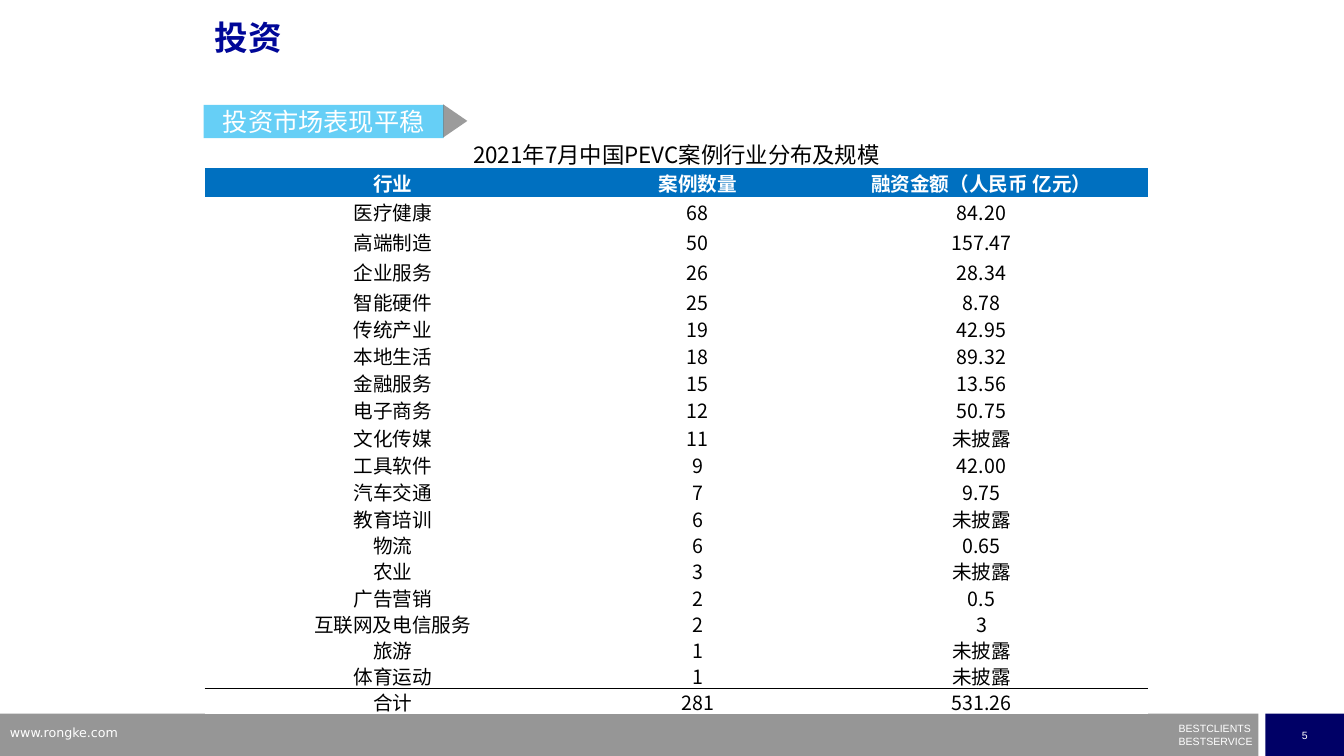
from pptx import Presentation
from pptx.dml.color import RGBColor as RGB
from pptx.enum.shapes import MSO_SHAPE as SHAPE
from pptx.enum.text import MSO_ANCHOR as ANCHOR, MSO_AUTO_SIZE as AUTO, PP_ALIGN as ALIGN
from pptx.oxml import parse_xml
from pptx.oxml.ns import nsdecls, qn
from pptx.util import Pt

PX = 9144
WHITE = RGB(0xFF, 0xFF, 0xFF)
BLACK = RGB(0, 0, 0)
GREY = RGB(0x96, 0x96, 0x96)
SLATE = RGB(0x59, 0x59, 0x59)
NAVY = RGB(0, 0, 0x66)
INK = RGB(0, 0x07, 0x98)
SKY = RGB(0, 0xB0, 0xF0)
BLUE = RGB(0, 0x70, 0xC0)
CJK = "Noto Sans CJK SC"
BARE = "{2D5ABB26-0587-4C30-8999-92F81FD0307C}"

CASES = """医疗健康 68 84.20
高端制造 50 157.47
企业服务 26 28.34
智能硬件 25 8.78
传统产业 19 42.95
本地生活 18 89.32
金融服务 15 13.56
电子商务 12 50.75
文化传媒 11 未披露
工具软件 9 42.00
汽车交通 7 9.75
教育培训 6 未披露
物流 6 0.65
农业 3 未披露
广告营销 2 0.5
互联网及电信服务 2 3
旅游 1 未披露
体育运动 1 未披露
合计 281 531.26"""
HEAD = ["行业", "案例数量", "融资金额（人民币 亿元）"]
COLS = [373, 232, 331]
ROWS = [30, 28] + [30] * 3 + [27] * 8 + [26] * 8


def scale(*box):
    return [n * PX for n in box]


def write(frame, text, size, color, name=CJK, bold=False, align=ALIGN.LEFT):
    frame.text = text
    look = {"size": Pt(size), "name": name, "bold": bold}
    for para in frame.paragraphs:
        para.alignment = align
        for run in para.runs:
            for key, value in look.items():
                setattr(run.font, key, value)
            run.font.color.rgb = color
            run.font._element.append(
                parse_xml(f'<a:ea {nsdecls("a")} typeface="{CJK}"/>'))


def block(shapes, kind, box, color, alpha=100):
    shape = shapes.add_shape(kind, *scale(*box))
    shape.shadow.inherit = False
    shape.fill.solid()
    shape.fill.fore_color.rgb = color
    shape.line.fill.background()
    if alpha < 100:
        tint = shape._element.spPr.find(qn("a:solidFill"))[0]
        tint.append(parse_xml(f'<a:alpha {nsdecls("a")} val="{alpha * 1000}"/>'))
    return shape


def foot(slide, x, y, w, h):
    shapes = slide.shapes
    block(shapes, SHAPE.RECTANGLE, (x, y, w - 85, h), GREY)
    page = block(shapes, SHAPE.RECTANGLE, (x + w - 78, y, 78, h), NAVY)
    page.text_frame.vertical_anchor = ANCHOR.MIDDLE
    write(page.text_frame, "5", 7.5, WHITE, "Arial", align=ALIGN.CENTER)

    motto = shapes.add_textbox(*scale(x + w - 164, y + 14, 76, 20)).text_frame
    for side in ("left", "right", "top", "bottom"):
        setattr(motto, f"margin_{side}", 0)
    motto.word_wrap = True
    write(motto, "BESTCLIENTS\nBESTSERVICE", 7.5, WHITE, "Arial")
    for para in motto.paragraphs:
        para.line_spacing = 0.5
    motto.paragraphs[1].space_before = Pt(4.3)

    site = shapes.add_textbox(*scale(x, y + 6, 320, 26)).text_frame
    site.word_wrap = True
    write(site, "www.rongke.com", 9, WHITE, "DejaVu Sans")


def title(slide, *box):
    head = slide.shapes.title
    head.left, head.top, head.width, head.height = scale(*box)
    frame = head.text_frame
    frame.auto_size = AUTO.NONE
    frame.vertical_anchor = ANCHOR.TOP
    write(frame, "投资", 24, INK, "Arial", True)
    frame.paragraphs[0].line_spacing = 0.9


def banner(slide, x, y, w, h):
    shapes = slide.shapes.add_group_shape().shapes
    tag = block(shapes, SHAPE.RECTANGLE, (x, y, w, h), SKY, 60)
    tag.text_frame.vertical_anchor = ANCHOR.MIDDLE
    write(tag.text_frame, "投资市场表现平稳", 18, WHITE, align=ALIGN.CENTER)
    tip = block(shapes, SHAPE.ISOSCELES_TRIANGLE,
                (x + w - 5, y + 4, h, 24), SLATE, 60)
    tip.rotation = 90


def rule(cell, side):
    cell._tc.get_or_add_tcPr().insert(0, parse_xml(
        f'<a:{side} {nsdecls("a")} w="12700"><a:solidFill>'
        f'<a:srgbClr val="{BLACK}"/></a:solidFill></a:{side}>'))


def fill(cell, text, size, color, back=None, bold=False):
    for side in ("left", "right", "top", "bottom"):
        setattr(cell, f"margin_{side}", 0)
    cell.vertical_anchor = ANCHOR.MIDDLE
    write(cell.text_frame, text, size, color, bold=bold, align=ALIGN.CENTER)
    if back is not None:
        cell.fill.solid()
        cell.fill.fore_color.rgb = back


def grid(slide, x, y):
    box = scale(x, y, sum(COLS), sum(ROWS))
    table = slide.shapes.add_table(len(ROWS), len(COLS), *box).table
    table.first_row = table.horz_banding = False
    table._tbl.tblPr.find(qn("a:tableStyleId")).text = BARE
    for col, width in zip(table.columns, COLS):
        col.width = width * PX
    for row, height in zip(table.rows, ROWS):
        row.height = height * PX

    top = table.cell(0, 0)
    top.merge(table.cell(0, 2))
    fill(top, "2021年7月中国PEVC案例行业分布及规模", 16, BLACK)
    data = [HEAD] + [line.split() for line in CASES.splitlines()]
    for r, line in enumerate(data, 1):
        color, back = (WHITE, BLUE) if r == 1 else (BLACK, WHITE)
        for c, text in enumerate(line):
            fill(table.cell(r, c), text, 14, color, back, r == 1)
    for c in range(len(COLS)):
        rule(table.cell(len(ROWS) - 2, c), "lnB")
        rule(table.cell(len(ROWS) - 1, c), "lnT")


def main():
    deck = Presentation()
    deck.slide_width, deck.slide_height = scale(1333, 750)
    slide = deck.slides.add_slide(deck.slide_layouts[5])
    foot(slide, 0, 708, 1333, 42)
    banner(slide, 202, 104, 238, 33)
    title(slide, 203, 16, 900, 70)
    grid(slide, 203, 137)
    deck.save("out.pptx")


if __name__ == "__main__":
    main()
